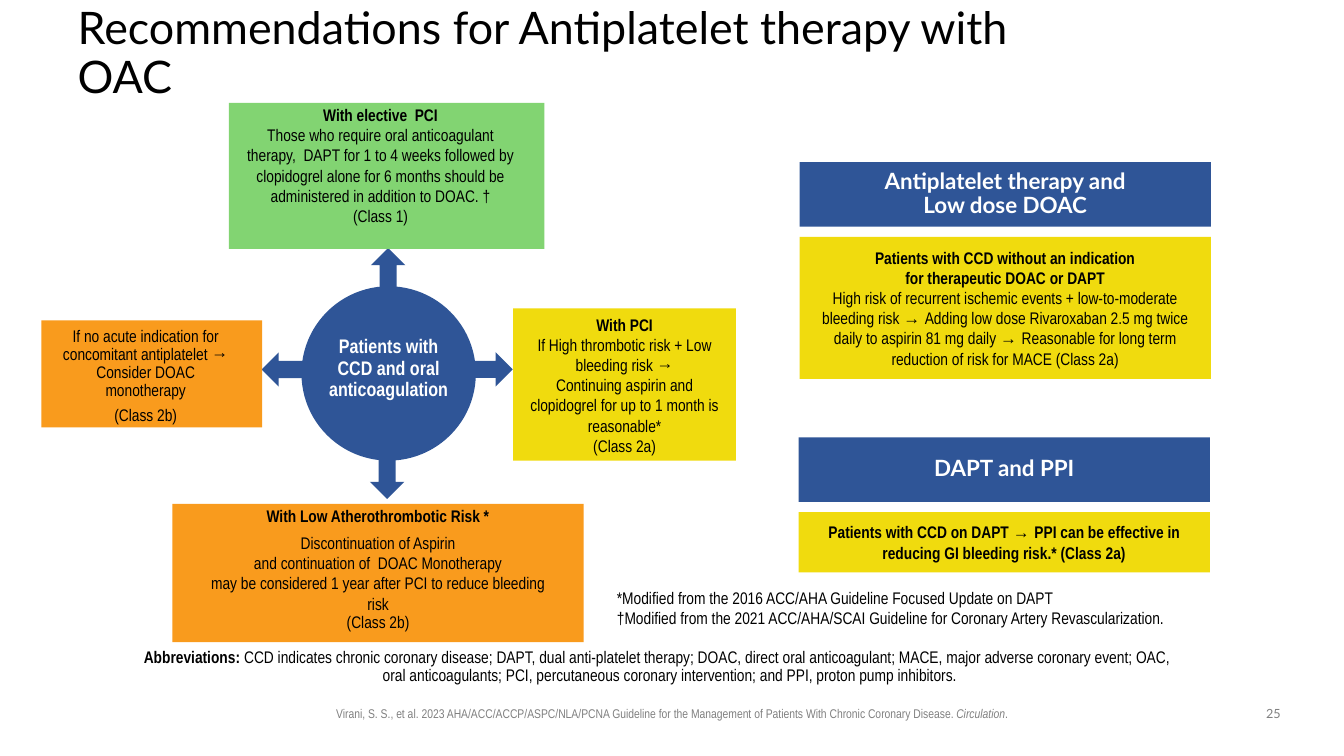
from lxml import etree
from pptx import Presentation
from pptx import util as u
from pptx.dml import color
from pptx.enum import shapes, text
from pptx.oxml import ns

BLUE, YELLOW, GREEN, ORANGE = "2F5597", "F0DB0E", "82D472", "F99B1D"
BLACK, WHITE, GRAY = "000000", "FFFFFF", "808080"
NARROW, LATO = "Arial Narrow", "Lato"
PAD = (0.1, 0.05, 0.1, 0.05)
MID, TOP = text.MSO_ANCHOR.MIDDLE, text.MSO_ANCHOR.TOP
LEFT, CENTER = text.PP_ALIGN.LEFT, text.PP_ALIGN.CENTER
KIND = shapes.MSO_SHAPE


def rgb(code):
    return color.RGBColor.from_string(code)


def place(item, x, y, w, h):
    item.left, item.top = u.Inches(x), u.Inches(y)
    item.width, item.height = u.Inches(w), u.Inches(h)


def write(frame, paras, size=12, font=NARROW, ink=BLACK, align=CENTER, pad=PAD, anchor=TOP):
    """Run flags: b bold, i italic, a Arial, t tight paragraph."""
    frame.word_wrap = True
    frame.auto_size = text.MSO_AUTO_SIZE.NONE
    frame.vertical_anchor = anchor
    sides = [u.Inches(side) for side in pad]
    frame.margin_left, frame.margin_top, frame.margin_right, frame.margin_bottom = sides
    for n, pieces in enumerate(paras):
        para = frame.add_paragraph() if n else frame.paragraphs[0]
        tight = "t" in pieces[0][0]
        para.alignment = align
        para.line_spacing = 0.9 if tight else 1.0
        para.space_before = u.Pt(0)
        para.space_after = u.Pt(size * 0.4 if tight else 0)
        for k, (flags, words) in enumerate(pieces):
            done = len(para.runs)
            if k:
                para.add_run().text = words
            else:
                para.text = words
                done = 0
            for run in para.runs[done:]:
                run.font.name = "Arial" if "a" in flags else font
                run.font.size = u.Pt(size)
                run.font.bold = "b" in flags
                run.font.italic = "i" in flags
                run.font.color.rgb = rgb(ink)


def block(slide, kind, box, fill, paras=(), **style):
    item = slide.shapes.add_shape(kind, *[u.Inches(v) for v in box])
    item.shadow.inherit = False
    item.fill.solid()
    item.fill.fore_color.rgb = rgb(fill)
    item.line.fill.background()
    write(item.text_frame, paras, **style)
    return item


def label(slide, box, paras, **style):
    item = slide.shapes.add_textbox(*[u.Inches(v) for v in box])
    write(item.text_frame, paras, **style)


def head(slide, box):
    title = slide.shapes.title
    place(title, *box)
    write(title.text_frame, [[("t", "Recommendations for Antiplatelet therapy with OAC")]],
          size=32, font=LATO, align=LEFT, pad=(0, 0, 0, 0), anchor=MID)


def wheel(slide, x, y):
    hub = 1.73
    block(slide, KIND.OVAL, (x, y, hub, hub), BLUE,
          [[("tb", "Patients with CCD and oral anticoagulation")]],
          size=14, ink=WHITE, pad=(0, 0.25, 0, 0))
    spots = [(0.69, -0.38), (1.66, 0.56), (0.68, 1.58), (-0.3, 0.56)]
    for turn, (dx, dy) in enumerate(spots):
        arrow = block(slide, KIND.UP_ARROW, (x + dx, y + dy, 0.34, 0.53), BLUE)
        arrow.rotation = 90 * turn
    cards = [
        ((-0.72, -1.82, 3.13, 1.45), GREEN, (0.16, 0.02, 0.28, 0), [
            [("b", "With elective  PCI")],
            [("", "Those who require oral anticoagulant therapy,  DAPT for 1 to 4 weeks "
                  "followed by clopidogrel alone for 6 months should be administered "
                  "in addition to DOAC. †")],
            [("", "(Class 1)")]]),
        ((2.1, 0.22, 2.21, 1.51), YELLOW, (0.12, 0.06, 0.12, 0), [
            [("b", "With PCI")],
            [("", "If High thrombotic risk + Low bleeding risk →")],
            [("", "Continuing aspirin and clopidogrel for up to 1 month is reasonable*")],
            [("", "(Class 2a)")]]),
        ((-1.28, 2.16, 4.08, 1.37), ORANGE, (0.33, 0.04, 0.33, 0), [
            [("tb", "With Low Atherothrombotic Risk *")],
            [("", "Discontinuation of Aspirin")],
            [("", "and continuation of  DOAC Monotherapy")],
            [("", "may be considered 1 year after PCI to reduce bleeding risk")],
            [("t", "(Class 2b)")]]),
        ((-2.58, 0.34, 2.19, 1.06), ORANGE, (0.14, 0.07, 0.26, 0), [
            [("t", "If no acute indication for concomitant antiplatelet → "
                   "Consider DOAC monotherapy")],
            [("t", "(Class 2b)")]]),
    ]
    for (dx, dy, w, h), fill, pad, paras in cards:
        block(slide, KIND.RECTANGLE, (x + dx, y + dy, w, h), fill, paras, pad=pad)


def panel(slide, x, y, deep, name, paras):
    wide, band, step = 4.08, 0.64, 0.74
    block(slide, KIND.RECTANGLE, (x, y, wide, band), BLUE, [[("tb", name)]],
          size=16, font=LATO, ink=WHITE, pad=(0, 0, 0, 0), anchor=MID)
    block(slide, KIND.RECTANGLE, (x, y + step, wide, deep), YELLOW, paras, anchor=MID)


def terms(slide, box):
    body = slide.placeholders[1]
    place(body, *box)
    props = body.text_frame.paragraphs[0]._p.get_or_add_pPr()
    props.set("marL", str(u.Inches(0.25)))
    props.set("indent", str(u.Inches(-0.25)))
    etree.SubElement(props, ns.qn("a:buNone"))
    write(body.text_frame, [[
        ("tb", "Abbreviations: "),
        ("", "CCD indicates chronic coronary disease; DAPT, dual anti-platelet therapy; "
             "DOAC, direct oral anticoagulant; MACE, major adverse coronary event; "
             "OAC, oral anticoagulants; PCI, percutaneous coronary intervention; "
             "and PPI, proton pump inhibitors.")]], pad=(0, 0.05, 0.1, 0.05))


def foot(slide, y):
    label(slide, (2.94, y, 7.45, 0.25), [[
        ("", "Virani, S. S., et al. 2023 AHA/ACC/ACCP/ASPC/NLA/PCNA Guideline for the "
             "Management of Patients With Chronic Coronary Disease. "),
        ("i", "Circulation"), ("", ".")]], size=9, ink=GRAY)
    label(slide, (12.42, y, 0.42, 0.26), [[("", "25")]], size=9, font=LATO, ink=GRAY)


def main():
    deck = Presentation()
    deck.slide_width, deck.slide_height = u.Inches(13.33), u.Inches(7.5)
    slide = deck.slides.add_slide(deck.slide_layouts[1])
    head(slide, (0.77, 0.18, 9.75, 0.72))
    wheel(slide, 2.99, 2.84)
    panel(slide, 7.93, 1.61, 1.41, "Antiplatelet therapy and\nLow dose DOAC", [
        [("b", "Patients with CCD without an indication\nfor therapeutic DOAC or DAPT")],
        [("", "High risk of recurrent ischemic events + low-to-moderate bleeding risk "),
         ("a", "→ "),
         ("", "Adding low dose Rivaroxaban 2.5 mg twice daily to aspirin 81 mg daily "),
         ("a", "→ "),
         ("", "Reasonable for long term reduction of risk for MACE (Class 2a)")]])
    panel(slide, 7.92, 4.34, 0.6, "DAPT and PPI", [
        [("b", "Patients with CCD on DAPT "), ("a", "→ "),
         ("b", "PPI can be effective in reducing GI bleeding risk.* (Class 2a)")]])
    label(slide, (6.02, 5.78, 6.67, 0.5), [
        [("", "*Modified from the 2016 ACC/AHA Guideline Focused Update on DAPT")],
        [("", "†Modified from the 2021 ACC/AHA/SCAI Guideline for Coronary Artery "
              "Revascularization.")]], align=LEFT)
    terms(slide, (1.4, 6.39, 10.34, 0.44))
    foot(slide, 6.95)
    deck.save("out.pptx")


if __name__ == "__main__":
    main()
